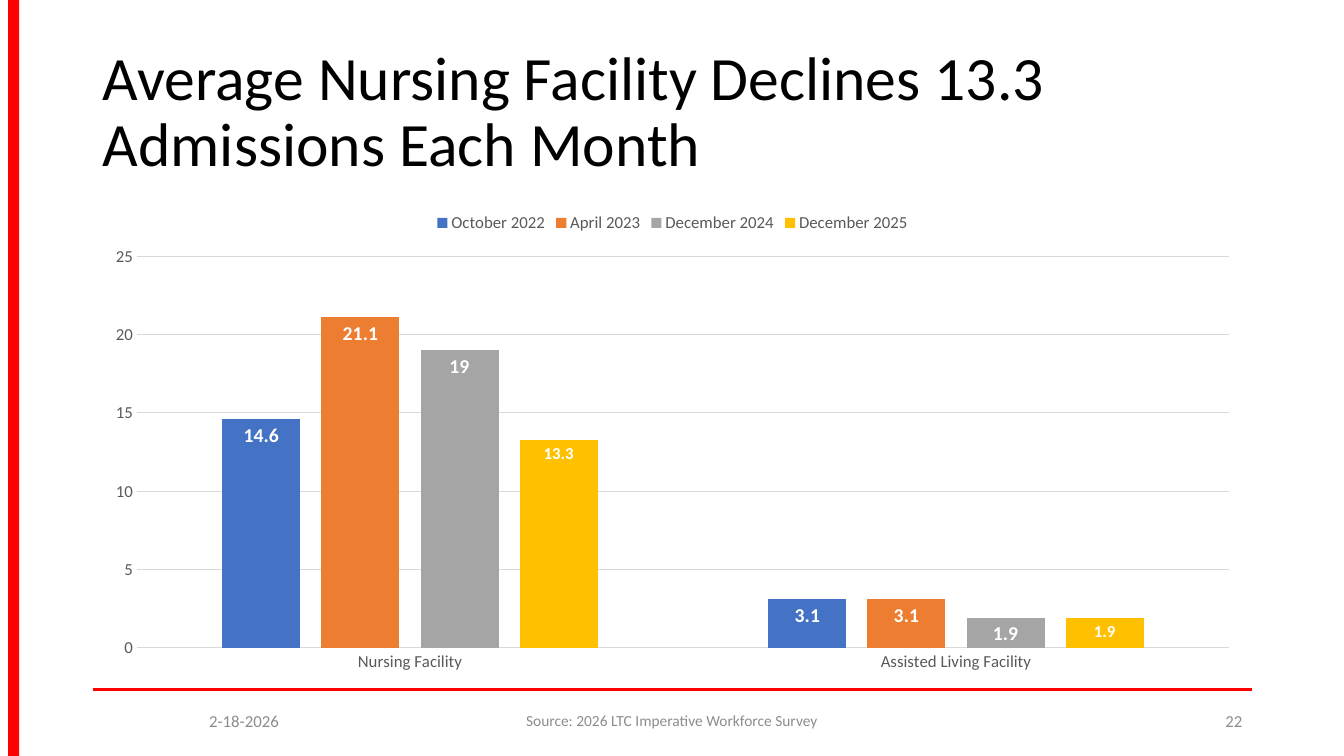
from lxml import etree
from pptx import Presentation
from pptx import util as u
from pptx.chart.data import CategoryChartData
from pptx.dml.color import RGBColor
from pptx.enum import chart as charts, shapes, text
from pptx.oxml import ns

RED = RGBColor(0xFF, 0x00, 0x00)
BLACK = RGBColor(0x00, 0x00, 0x00)
WHITE = RGBColor(0xFF, 0xFF, 0xFF)
FOOTER_GRAY = RGBColor(0x8C, 0x8C, 0x8C)
LABEL_GRAY = RGBColor(0x59, 0x59, 0x59)
GRID_GRAY = RGBColor(0xD9, 0xD9, 0xD9)
BLUE = RGBColor(0x44, 0x72, 0xC4)
ORANGE = RGBColor(0xED, 0x7D, 0x31)
SILVER = RGBColor(0xA5, 0xA5, 0xA5)
GOLD = RGBColor(0xFF, 0xC0, 0x00)

LEFT = u.Inches(0.92)
WIDTH = u.Inches(11.5)
RIGHT = LEFT + WIDTH


def style_font(font, size, color, bold=False):
    font.name = "Calibri"
    font.size = u.Pt(size)
    font.bold = bold
    font.color.rgb = color


def write(box, words, size, color, align):
    box.text_frame.word_wrap = True
    box.text_frame.vertical_anchor = text.MSO_ANCHOR.MIDDLE
    para = box.text_frame.paragraphs[0]
    para.alignment = align
    span = para.add_run()
    span.text = words
    style_font(span.font, size, color)
    return para


deck = Presentation()
deck.slide_width = u.Inches(13.33)
deck.slide_height = u.Inches(7.5)
page = deck.slides.add_slide(deck.slide_layouts[5])

rule_y = u.Inches(6.84)
rule = page.shapes.add_connector(shapes.MSO_CONNECTOR.STRAIGHT, LEFT, rule_y, RIGHT, rule_y)
rule.line.color.rgb = RED
rule.line.width = u.Pt(2)
etree.SubElement(rule._element.spPr, ns.qn("a:effectLst"))

stripe = page.shapes.add_shape(
    shapes.MSO_SHAPE.RECTANGLE, u.Inches(0.08), 0, u.Inches(0.11), deck.slide_height)
stripe.shadow.inherit = False
stripe.fill.solid()
stripe.fill.fore_color.rgb = RED
stripe.line.fill.background()

title = page.shapes.title
title.left, title.top, title.width, title.height = LEFT, u.Inches(0.4), WIDTH, u.Inches(1.45)
title.text_frame.auto_size = text.MSO_AUTO_SIZE.NONE
heading = write(title, "Average Nursing Facility Declines 13.3 Admissions Each Month",
                44, BLACK, text.PP_ALIGN.LEFT)
heading.line_spacing = 0.9

surveys = [
    ("October 2022", (14.6, 3.1), BLUE, 14, "0.0"),
    ("April 2023", (21.1, 3.1), ORANGE, 14, "#,##0.0"),
    ("December 2024", (19, 1.9), SILVER, 14, "General"),
    ("December 2025", (13.3, 1.9), GOLD, 12, "General"),
]
admissions = CategoryChartData()
admissions.categories = ["Nursing Facility", "Assisted Living Facility"]
for name, values, *_ in surveys:
    admissions.add_series(name, values)

chart = page.shapes.add_chart(
    charts.XL_CHART_TYPE.COLUMN_CLUSTERED, LEFT, u.Inches(2), WIDTH, u.Inches(4.76), admissions).chart
style_font(chart.font, 10, BLACK)
chart.has_title = False
chart.has_legend = True
chart.legend.position = charts.XL_LEGEND_POSITION.TOP
chart.legend.include_in_layout = False
style_font(chart.legend.font, 12, LABEL_GRAY)

for axis in (chart.category_axis, chart.value_axis):
    axis.major_tick_mark = charts.XL_TICK_MARK.NONE
    axis.minor_tick_mark = charts.XL_TICK_MARK.NONE
    style_font(axis.tick_labels.font, 12, LABEL_GRAY)

value_axis = chart.value_axis
value_axis.minimum_scale = 0
value_axis.maximum_scale = 25
value_axis.major_unit = 5
value_axis.has_major_gridlines = True
value_axis.format.line.fill.background()
value_axis.tick_labels.number_format = "0"
value_axis.tick_labels.number_format_is_linked = False
for line in (chart.category_axis.format.line, value_axis.major_gridlines.format.line):
    line.color.rgb = GRID_GRAY
    line.width = u.Pt(0.75)

plot = chart.plots[0]
plot.gap_width = 219
plot.overlap = -27
plot.vary_by_categories = False
for series, (_, _, color, size, number_format) in zip(plot.series, surveys):
    series.format.fill.solid()
    series.format.fill.fore_color.rgb = color
    series.invert_if_negative = False
    labels = series.data_labels
    labels.show_value = True
    labels.position = charts.XL_LABEL_POSITION.INSIDE_END
    labels.number_format = number_format
    labels.number_format_is_linked = False
    style_font(labels.font, size, WHITE, bold=True)

side = u.Inches(3)
middle = u.Inches(4.5)
footers = [
    ("2-18-2026", LEFT, side, 12, text.PP_ALIGN.CENTER),
    ("22", RIGHT - side, side, 12, text.PP_ALIGN.RIGHT),
    ("Source: 2026 LTC Imperative Workforce Survey",
     (deck.slide_width - middle) // 2, middle, 11, text.PP_ALIGN.CENTER),
]
for words, left, width, size, align in footers:
    box = page.shapes.add_textbox(left, u.Inches(6.95), width, u.Inches(0.4))
    write(box, words, size, FOOTER_GRAY, align)

deck.save("out.pptx")
